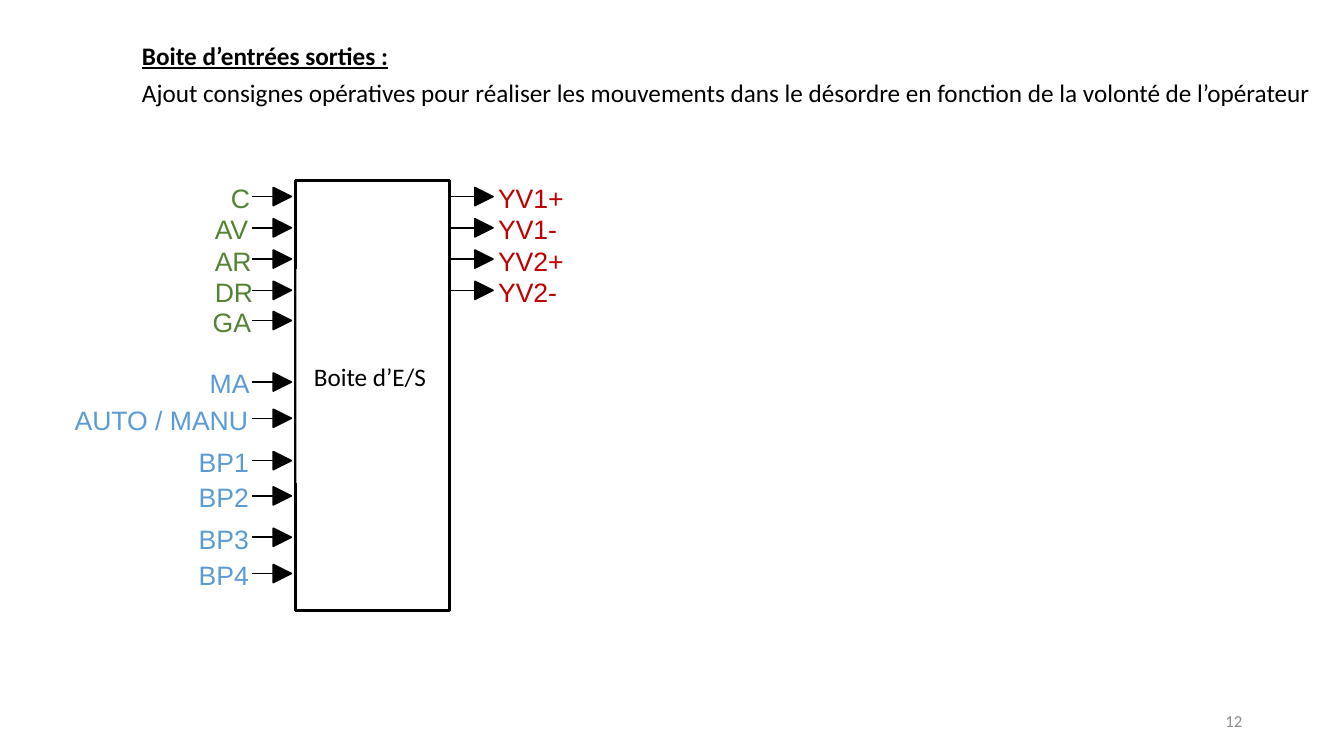
from lxml import etree
from pptx import Presentation
from pptx.dml.color import RGBColor
from pptx.enum.shapes import MSO_CONNECTOR, MSO_SHAPE
from pptx.enum.text import MSO_ANCHOR, MSO_AUTO_SIZE, PP_ALIGN
from pptx.oxml.ns import qn
from pptx.util import Inches, Pt

COLORS = {
    "black": "000000",
    "white": "FFFFFF",
    "sensor": "548235",
    "operator": "5B9BD5",
    "valve": "C00000",
    "number": "8C8C8C",
}
WIRE_WIDTH = 1.13
LABEL_RISE = 0.145  # from the top of a label to its wire

# Label, left edge, label width, wire height
SENSORS = [
    ("C", 2.29, 0.2, 1.95),
    ("AV", 2.13, 0.35, 2.26),
    ("AR", 2.13, 0.38, 2.57),
    ("DR", 2.13, 0.39, 2.88),
    ("GA", 2.11, 0.4, 3.18),
]
CONTROLS = [
    ("MA", 2.08, 0.41, 3.79),
    ("AUTO / MANU", 0.74, 1.74, 4.15),
    ("BP1", 1.97, 0.51, 4.57),
    ("BP2", 1.97, 0.51, 4.92),
    ("BP3", 1.97, 0.51, 5.33),
    ("BP4", 1.97, 0.51, 5.69),
]
VALVES = [
    ("YV1+", 4.94, 0.66, 1.95),
    ("YV1-", 4.94, 0.59, 2.26),
    ("YV2+", 4.94, 0.66, 2.57),
    ("YV2-", 4.94, 0.59, 2.88),
]


def rgb(name):
    return RGBColor.from_string(COLORS[name])


def write(shape, text, size, color="black", font="Calibri", align=PP_ALIGN.LEFT):
    shape.text_frame.text = text
    para = shape.text_frame.paragraphs[0]
    para.alignment = align
    span = para.runs[0]
    span.font.size = Pt(size)
    span.font.name = font
    span.font.color.rgb = rgb(color)
    return span


def add_text(page, area, text, size, **style):
    box = page.shapes.add_textbox(*map(Inches, area))
    box.text_frame.word_wrap = True
    return box, write(box, text, size, **style)


def add_label(page, text, left, width, wire_y, color):
    area = (left, wire_y - LABEL_RISE, width, 0.32)
    box, _ = add_text(page, area, text, 19, color=color, font="Arial")
    frame = box.text_frame
    # The box grows with its text, which stays on one line
    frame.word_wrap = False
    frame.auto_size = MSO_AUTO_SIZE.SHAPE_TO_FIT_TEXT
    frame.margin_left = frame.margin_right = 0
    frame.margin_top = frame.margin_bottom = 0


def add_block(page, area, border=None):
    block = page.shapes.add_shape(MSO_SHAPE.RECTANGLE, *map(Inches, area))
    block.shadow.inherit = False
    block.fill.solid()
    block.fill.fore_color.rgb = rgb("white")
    if border:
        block.line.color.rgb = rgb("black")
        block.line.width = Pt(border)
    else:
        block.line.fill.background()
    return block


def add_arrow(page, start, tip, y):
    wire = page.shapes.add_connector(
        MSO_CONNECTOR.STRAIGHT, Inches(start), Inches(y), Inches(tip), Inches(y))
    etree.SubElement(wire._element.spPr, qn("a:effectLst"))
    # Triangular head
    back = Inches(tip - 0.18)
    builder = page.shapes.build_freeform(Inches(tip), Inches(y))
    builder.add_line_segments(
        [(back, Inches(y - 0.09)), (back, Inches(y + 0.09))], close=True)
    head = builder.convert_to_shape()
    head.shadow.inherit = False
    head.fill.solid()
    head.fill.fore_color.rgb = rgb("black")
    for part in (wire, head):
        part.line.color.rgb = rgb("black")
        part.line.width = Pt(WIRE_WIDTH)


def add_signals(page, signals, color, start, tip):
    for text, left, width, wire_y in signals:
        add_arrow(page, start, tip, wire_y)
        add_label(page, text, left, width, wire_y, color)


def main():
    deck = Presentation()
    deck.slide_width, deck.slide_height = Inches(13.33), Inches(7.5)
    page = deck.slides.add_slide(deck.slide_layouts[6])

    # Heading
    _, title = add_text(page, (1.31, 0.35, 11.03, 0.4), "Boite d’entrées sorties :", 18)
    title.font.bold = title.font.underline = True
    add_text(page, (1.31, 0.72, 12.02, 0.4),
             "Ajout consignes opératives pour réaliser les mouvements dans le "
             "désordre en fonction de la volonté de l’opérateur", 18)

    # Input/output box
    add_block(page, (2.93, 1.79, 1.53, 4.27), border=2.38)
    caption = add_block(page, (2.94, 2.67, 1.46, 2.12))
    caption.text_frame.vertical_anchor = MSO_ANCHOR.MIDDLE
    write(caption, "Boite d’E/S", 18, align=PP_ALIGN.CENTER)

    # Inputs on the left, outputs on the right
    add_signals(page, SENSORS, "sensor", 2.5, 2.89)
    add_signals(page, CONTROLS, "operator", 2.5, 2.89)
    add_signals(page, VALVES, "valve", 4.46, 4.89)

    # Page number
    number, _ = add_text(page, (9.42, 6.95, 3, 0.4), "12", 12,
                         color="number", align=PP_ALIGN.RIGHT)
    number.text_frame.vertical_anchor = MSO_ANCHOR.MIDDLE

    deck.save("out.pptx")


if __name__ == "__main__":
    main()
